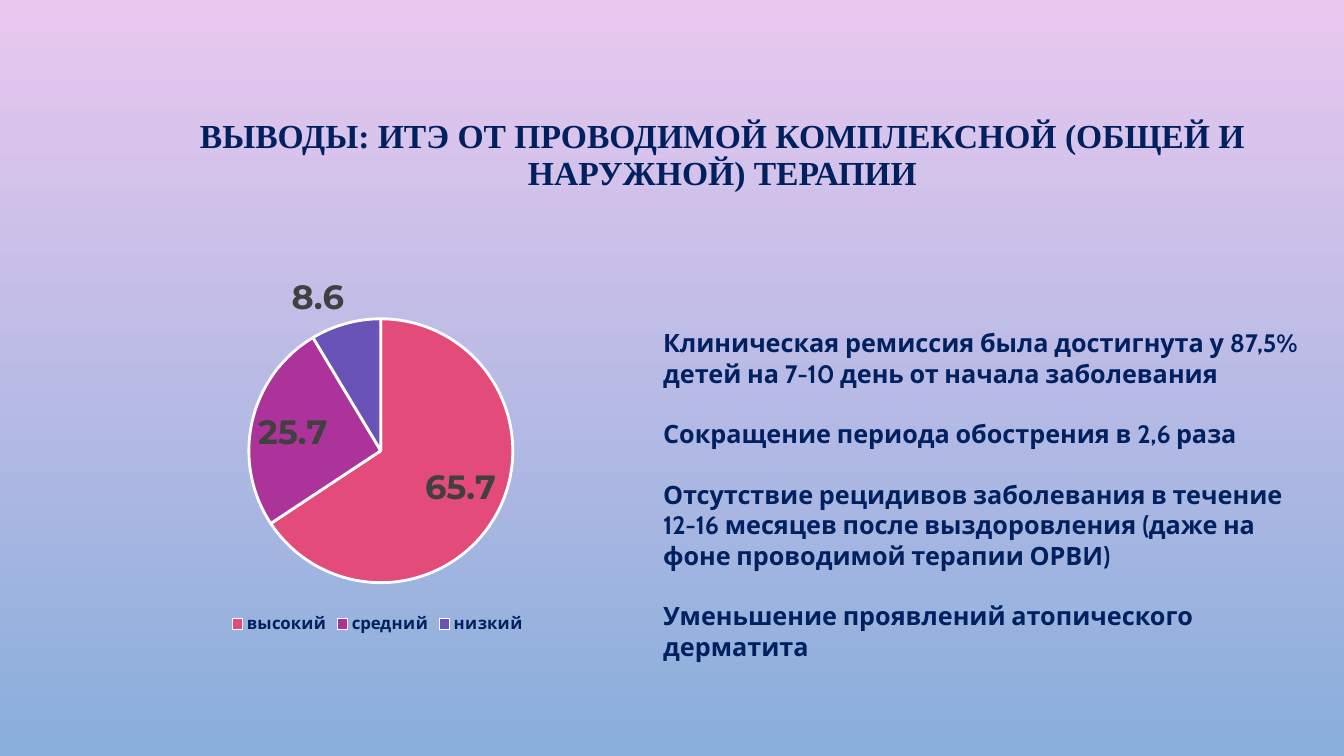
from dataclasses import dataclass

import pptx
import pptx.chart.data
import pptx.dml.color
import pptx.enum.chart
import pptx.enum.text
import pptx.util

WIDTH = pptx.util.Inches(13.33)
HEIGHT = pptx.util.Inches(7.5)


@dataclass(frozen=True)
class Theme:
    sky: tuple = ("E9C8EF", "89AEDB")
    navy: str = "002060"
    label: str = "404040"
    outline: str = "FFFFFF"
    slices: tuple = ("E34B7A", "AC339A", "6953B7")
    title_face: str = "Times New Roman"
    body_face: str = "Cabin"
    label_face: str = "Montserrat"
    title_size: int = 24
    body_size: int = 18
    label_size: int = 24
    legend_size: int = 12
    paragraph_gap: float = 21.8


THEME = Theme()

TITLE = "ВЫВОДЫ: ИТЭ ОТ ПРОВОДИМОЙ КОМПЛЕКСНОЙ (ОБЩЕЙ И НАРУЖНОЙ) ТЕРАПИИ"
EFFECT_SHARES = {"высокий": 65.7, "средний": 25.7, "низкий": 8.6}
FINDINGS = (
    "Клиническая ремиссия была достигнута у 87,5% детей на 7-10 день "
    "от начала заболевания",
    "Сокращение периода обострения в 2,6 раза",
    "Отсутствие рецидивов заболевания в течение 12-16 месяцев после "
    "выздоровления (даже на фоне проводимой терапии ОРВИ)",
    "Уменьшение проявлений атопического дерматита",
)


def rgb(code):
    return pptx.dml.color.RGBColor.from_string(code)


def area(left, top, width, height):
    """Turn shares of the slide's size into lengths."""
    return (int(left * WIDTH), int(top * HEIGHT),
            int(width * WIDTH), int(height * HEIGHT))


def style_font(font, face, size, color):
    font.name = face
    font.size = pptx.util.Pt(size)
    font.bold = True
    font.color.rgb = rgb(color)


def paint_background(page):
    fill = page.background.fill
    fill.gradient()
    fill.gradient_angle = 270
    for stop, color in zip(fill.gradient_stops, THEME.sky):
        stop.color.rgb = rgb(color)


def add_text(page, place, lines, face, size):
    """Add a wrapped text box and return its text frame."""
    frame = page.shapes.add_textbox(*area(*place)).text_frame
    frame.word_wrap = True
    for index, line in enumerate(lines):
        para = frame.paragraphs[0] if index == 0 else frame.add_paragraph()
        para.text = line
        if index:
            para.space_before = pptx.util.Pt(THEME.paragraph_gap)
        style_font(para.font, face, size, THEME.navy)
    return frame


def add_title(page, place):
    frame = add_text(page, place, [TITLE], THEME.title_face, THEME.title_size)
    frame.vertical_anchor = pptx.enum.text.MSO_ANCHOR.MIDDLE
    frame.paragraphs[0].alignment = pptx.enum.text.PP_ALIGN.CENTER
    frame.paragraphs[0].line_spacing = 0.9


def add_effect_pie(page, place):
    chart_data = pptx.chart.data.CategoryChartData()
    chart_data.categories = list(EFFECT_SHARES)
    chart_data.add_series("Series 1", list(EFFECT_SHARES.values()))
    chart = page.shapes.add_chart(
        pptx.enum.chart.XL_CHART_TYPE.PIE, *area(*place), chart_data).chart
    chart.has_title = False
    chart.font.name = THEME.body_face
    chart.font.size = pptx.util.Pt(10)

    chart.has_legend = True
    chart.legend.position = pptx.enum.chart.XL_LEGEND_POSITION.BOTTOM
    chart.legend.include_in_layout = False
    style_font(chart.legend.font, THEME.body_face, THEME.legend_size, THEME.navy)

    plot = chart.plots[0]
    plot.vary_by_categories = True
    series = plot.series[0]
    for index, color in enumerate(THEME.slices):
        piece = series.points[index].format
        piece.fill.solid()
        piece.fill.fore_color.rgb = rgb(color)
        piece.line.color.rgb = rgb(THEME.outline)
        piece.line.width = pptx.util.Pt(2)

    labels = series.data_labels
    labels.show_value = True
    labels.position = pptx.enum.chart.XL_LABEL_POSITION.BEST_FIT
    style_font(labels.font, THEME.label_face, THEME.label_size, THEME.label)


def main():
    deck = pptx.Presentation()
    deck.slide_width, deck.slide_height = WIDTH, HEIGHT
    page = deck.slides.add_slide(deck.slide_layouts[6])
    paint_background(page)
    add_title(page, (0.075, 0.09, 0.925, 0.233))
    add_effect_pie(page, (0.075, 0.345, 0.4125, 0.499))
    add_text(page, (0.486, 0.427, 0.5, 0.417), FINDINGS,
             THEME.body_face, THEME.body_size)
    deck.save("out.pptx")


if __name__ == "__main__":
    main()
